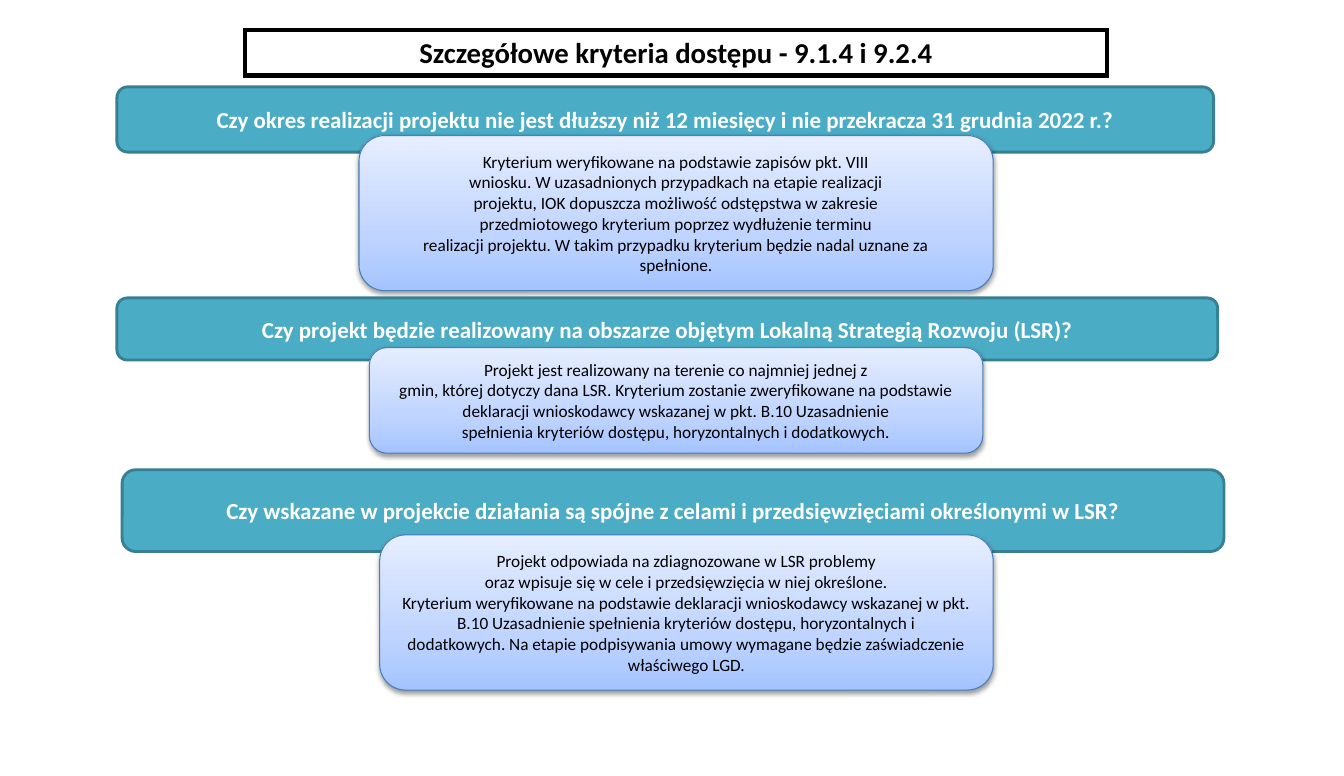
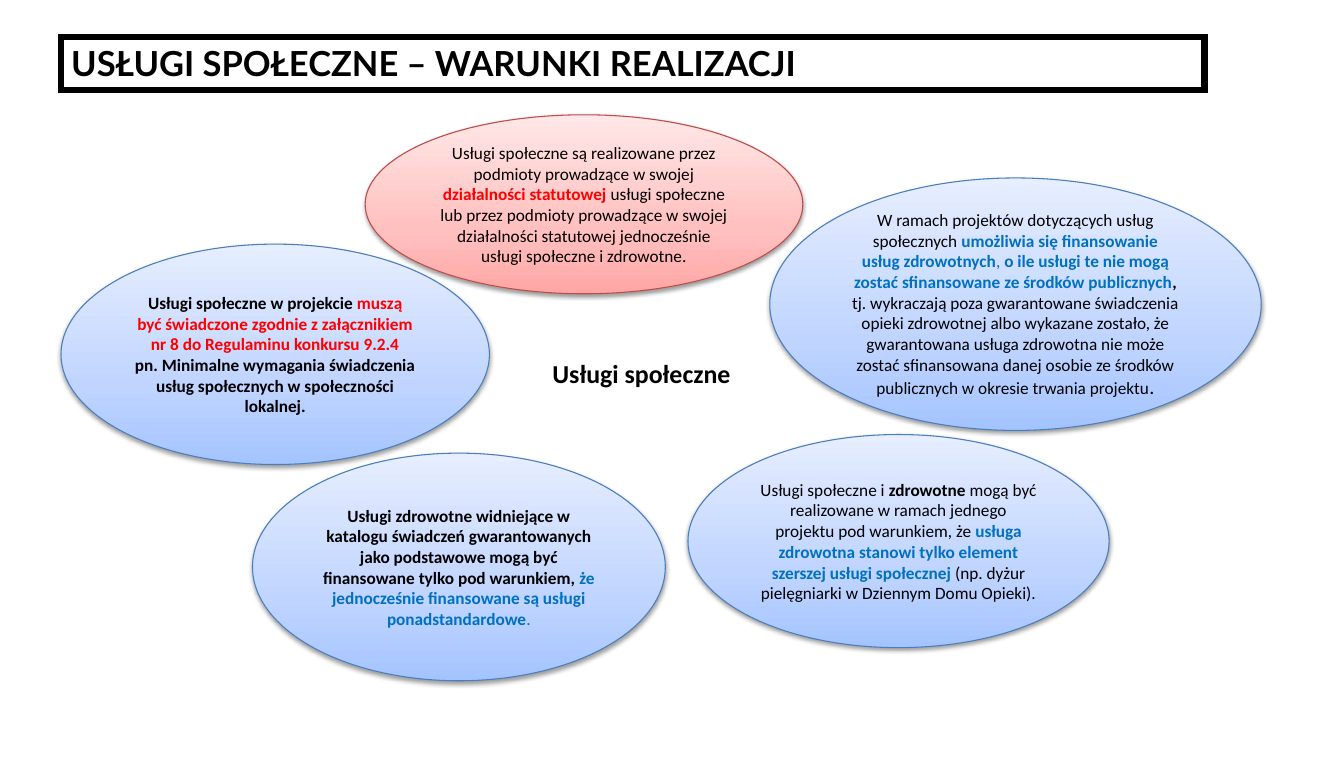
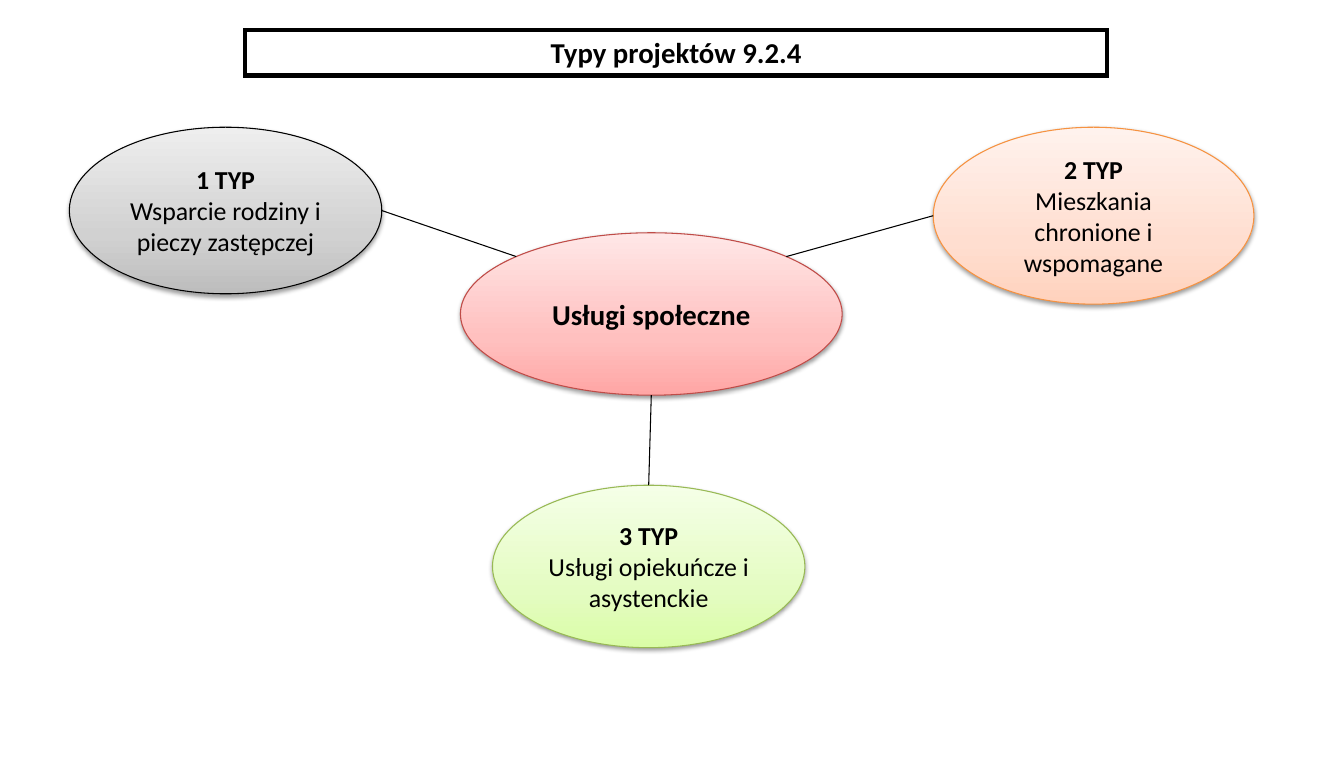
from copy import deepcopy
from math import cos, radians, sin

from lxml import etree
from pptx import Presentation
from pptx.dml.color import RGBColor
from pptx.enum.shapes import MSO_CONNECTOR, MSO_SHAPE
from pptx.enum.text import MSO_ANCHOR, MSO_AUTO_SIZE, PP_ALIGN
from pptx.oxml.ns import qn
from pptx.util import Emu, Pt

RECT, ROUND, OVAL = MSO_SHAPE.RECTANGLE, MSO_SHAPE.ROUNDED_RECTANGLE, MSO_SHAPE.OVAL
STRAIGHT = MSO_CONNECTOR.STRAIGHT
TOP, MIDDLE = MSO_ANCHOR.TOP, MSO_ANCHOR.MIDDLE
LEFT, CENTER = PP_ALIGN.LEFT, PP_ALIGN.CENTER
GROW = MSO_AUTO_SIZE.SHAPE_TO_FIT_TEXT

PX = 9144  # 100 px to the inch
BLACK, WHITE, ACCENT, WARNING = "000000", "FFFFFF", "0070C0", "FF0000"
TEAL, TEAL_DARK = "4BACC6", "377F92"
STOPS = (0, 0.35, 1)
# Bottom, middle and top of the gradient, then the outline
BLUE = ("A4C4FF", "BFD4FF", "E6EEFF", "4B7EBC")
RED = ("FFA6A5", "FFC0BF", "FFE7E7", "BF4C48")
GREY = ("BDBDBD", "D1D1D1", "EEEEEE", BLACK)
ORANGE = ("FFD2BD", "FFDED0", "FFF2ED", "F69240")
GREEN = ("DAFDA7", "E4FCC2", "F5FFE7", "98B955")

TITLE_BOX = (237, 29, 833, 44)


def rgb(value):
    return RGBColor.from_string(value)


def px(*lengths):
    return [Emu(round(n * PX)) for n in lengths]


def write(sp, paragraphs, size, color=BLACK, bold=False, font="Calibri",
          align=CENTER, anchor=MIDDLE, wrap=True):
    """A paragraph is a list of runs: text, or (text, {overrides})."""
    tf = sp.text_frame
    tf.word_wrap = wrap
    tf.vertical_anchor = anchor
    for i, runs in enumerate(paragraphs):
        p = tf.paragraphs[0] if i == 0 else tf.add_paragraph()
        p.alignment = align
        p.font.name, p.font.size, p.font.bold = font, Pt(size), bold
        p.font.color.rgb = rgb(color)
        for run in runs:
            text, style = (run, {}) if isinstance(run, str) else run
            r = p.add_run()
            r.text = text
            if "bold" in style:
                r.font.bold = style["bold"]
            if "color" in style:
                r.font.color.rgb = rgb(style["color"])
            if "size" in style:
                r.font.size = Pt(style["size"])


def add_box(slide, kind, box, line, width):
    sp = slide.shapes.add_shape(kind, *px(*box))
    sp.shadow.inherit = False
    sp.line.color.rgb = rgb(line)
    sp.line.width = Pt(width)
    return sp


def add_title(slide, text, box=TITLE_BOX, size=20, width=3, **style):
    sp = add_box(slide, RECT, box, BLACK, width)
    sp.fill.background()
    etree.SubElement(sp._element.spPr.find(qn("a:ln")), qn("a:miter"), lim="800000")
    write(sp, [[text]], size, bold=True, anchor=TOP, **style)
    sp.text_frame.auto_size = GROW


def add_gradient(slide, kind, box, palette, paragraphs, size=12, bold=False):
    *colors, outline = palette
    sp = add_box(slide, kind, box, outline, 0.75)
    spPr = sp._element.spPr
    # Three stops, running upwards
    sp.fill.gradient()
    sp.fill.gradient_angle = 90
    first = spPr.find(".//" + qn("a:gs"))
    first.addnext(deepcopy(first))
    for stop, position, color in zip(sp.fill.gradient_stops, STOPS, colors):
        stop.position = position
        stop.color.rgb = rgb(color)
    # Soft shadow below
    shadow = etree.SubElement(spPr.find(qn("a:effectLst")), qn("a:outerShdw"),
                              blurRad="40000", dist="20000", dir="5400000", rotWithShape="0")
    tint = etree.SubElement(shadow, qn("a:srgbClr"), val=BLACK)
    etree.SubElement(tint, qn("a:alpha"), val="38000")
    write(sp, paragraphs, size, bold=bold)


def add_criterion(slide, band, card, question, lines):
    sp = add_box(slide, ROUND, band, TEAL_DARK, 2)
    sp.fill.solid()
    sp.fill.fore_color.rgb = rgb(TEAL)
    write(sp, [[question]], 16, WHITE, bold=True)
    add_gradient(slide, ROUND, card, BLUE, [[line] for line in lines])


def rim(box, degrees):
    """Point on an ellipse, clockwise from its right end."""
    x, y, w, h = box
    a = radians(degrees)
    return x + w / 2 * (1 + cos(a)), y + h / 2 * (1 + sin(a))


def add_link(slide, start, end):
    line = slide.shapes.add_connector(STRAIGHT, *px(*start, *end))
    line.line.color.rgb = rgb(BLACK)
    line.line.width = Pt(0.75)
    etree.SubElement(line._element.spPr, qn("a:effectLst"))


def criteria_slide(slide):
    add_title(slide, "Szczegółowe kryteria dostępu - 9.1.4 i 9.2.4")
    add_criterion(
        slide, (113, 84, 1060, 63), (347, 131, 613, 150),
        "Czy okres realizacji projektu nie jest dłuższy niż 12 miesięcy i nie przekracza 31 grudnia 2022 r.?",
        ["Kryterium weryfikowane na podstawie zapisów pkt. VIII",
         "wniosku. W uzasadnionych przypadkach na etapie realizacji",
         "projektu, IOK dopuszcza możliwość odstępstwa w zakresie",
         "przedmiotowego kryterium poprzez wydłużenie terminu",
         "realizacji projektu. W takim przypadku kryterium będzie nadal uznane za",
         "spełnione."])
    add_criterion(
        slide, (113, 288, 1064, 60), (357, 336, 593, 102),
        "Czy projekt będzie realizowany na obszarze objętym Lokalną Strategią Rozwoju (LSR)?",
        ["Projekt jest realizowany na terenie co najmniej jednej z",
         "gmin, której dotyczy dana LSR. Kryterium zostanie zweryfikowane na podstawie "
         "deklaracji wnioskodawcy wskazanej w pkt. B.10 Uzasadnienie",
         "spełnienia kryteriów dostępu, horyzontalnych i dodatkowych."])
    add_criterion(
        slide, (118, 454, 1065, 79), (367, 517, 593, 150),
        "Czy wskazane w projekcie działania są spójne z celami i przedsięwzięciami określonymi w LSR?",
        ["Projekt odpowiada na zdiagnozowane w LSR problemy",
         "oraz wpisuje się w cele i przedsięwzięcia w niej określone.",
         "Kryterium weryfikowane na podstawie deklaracji wnioskodawcy wskazanej w pkt. "
         "B.10 Uzasadnienie spełnienia kryteriów dostępu, horyzontalnych i",
         "dodatkowych. Na etapie podpisywania umowy wymagane będzie zaświadczenie właściwego LGD."])


def conditions_slide(slide):
    add_title(slide, "USŁUGI SPOŁECZNE – WARUNKI REALIZACJI", (59, 36, 1105, 51),
              24, 4.5, font="Lato", align=LEFT)
    strong = {"bold": True}
    blue, red = {"bold": True, "color": ACCENT}, {"bold": True, "color": WARNING}
    conditions = [
        ((353, 111, 423, 173), RED, False, [
            ["Usługi społeczne są realizowane przez podmioty prowadzące w swojej ",
             ("działalności statutowej ", red),
             "usługi społeczne lub przez podmioty prowadzące w swojej działalności "
             "statutowej jednocześnie usługi społeczne i zdrowotne."]]),
        ((665, 420, 407, 206), BLUE, False, [
            ["Usługi społeczne i ", ("zdrowotne", strong),
             " mogą być realizowane w ramach jednego projektu pod warunkiem, że ",
             ("usługa zdrowotna stanowi tylko element szerszej usługi społecznej ", blue),
             "(np. dyżur pielęgniarki w Dziennym Domu Opieki)."]]),
        ((744, 172, 475, 244), BLUE, False, [
            ["W ramach projektów dotyczących usług społecznych ",
             ("umożliwia się finansowanie usług zdrowotnych", blue),
             (", ", {"color": ACCENT}),
             ("o ile usługi te nie mogą zostać sfinansowane ze środków publicznych", blue),
             (",", strong)],
            ["tj. wykraczają poza gwarantowane świadczenia opieki zdrowotnej albo wykazane "
             "zostało, że gwarantowana usługa zdrowotna nie może zostać sfinansowana danej "
             "osobie ze środków publicznych w okresie trwania projektu",
             (".", {"size": 14})]]),
        ((244, 438, 399, 220), BLUE, True, [
            ["Usługi zdrowotne widniejące w katalogu świadczeń gwarantowanych jako "
             "podstawowe mogą być finansowane tylko pod warunkiem, ",
             ("że jednocześnie finansowane są usługi ponadstandardowe", blue),
             (".", {"bold": False, "color": ACCENT})]]),
        ((59, 236, 414, 213), BLUE, True, [
            ["Usługi społeczne w projekcie ",
             ("muszą być świadczone zgodnie z załącznikiem", red)],
            [("nr 8 do Regulaminu konkursu 9.2.4", red)],
            ["pn. Minimalne wymagania świadczenia usług społecznych w społeczności lokalnej."]]),
    ]
    for box, palette, bold, paragraphs in conditions:
        add_gradient(slide, OVAL, box, palette, paragraphs, bold=bold)
    # Caption in the middle of the ring
    caption = slide.shapes.add_textbox(*px(524, 341, 199, 40))
    write(caption, [["Usługi społeczne"]], 18, bold=True, align=LEFT, anchor=TOP, wrap=False)
    caption.text_frame.auto_size = GROW


def types_slide(slide):
    add_title(slide, "Typy projektów 9.2.4")
    hub = (445, 225, 369, 157)
    add_gradient(slide, OVAL, hub, RED, [["Usługi społeczne"]], 20, bold=True)
    # Box, palette, text, and the angles where the link leaves the hub and arrives
    types = [
        ((67, 123, 302, 161), GREY, "Wsparcie rodziny i pieczy zastępczej", 225, 0),
        ((902, 123, 310, 171), ORANGE, "Mieszkania chronione i wspomagane", 315, 180),
        ((476, 469, 302, 157), GREEN, "Usługi opiekuńcze i asystenckie", 90, 270),
    ]
    for number, (box, palette, text, leave, arrive) in enumerate(types, 1):
        heading = (f"{number} TYP", {"bold": True})
        add_gradient(slide, OVAL, box, palette, [[heading], [text]], 18)
        add_link(slide, rim(hub, leave), rim(box, arrive))


def main():
    prs = Presentation()
    prs.slide_width, prs.slide_height = px(1299, 750)
    for build in (criteria_slide, conditions_slide, types_slide):
        build(prs.slides.add_slide(prs.slide_layouts[6]))
    prs.save("out.pptx")


if __name__ == "__main__":
    main()
